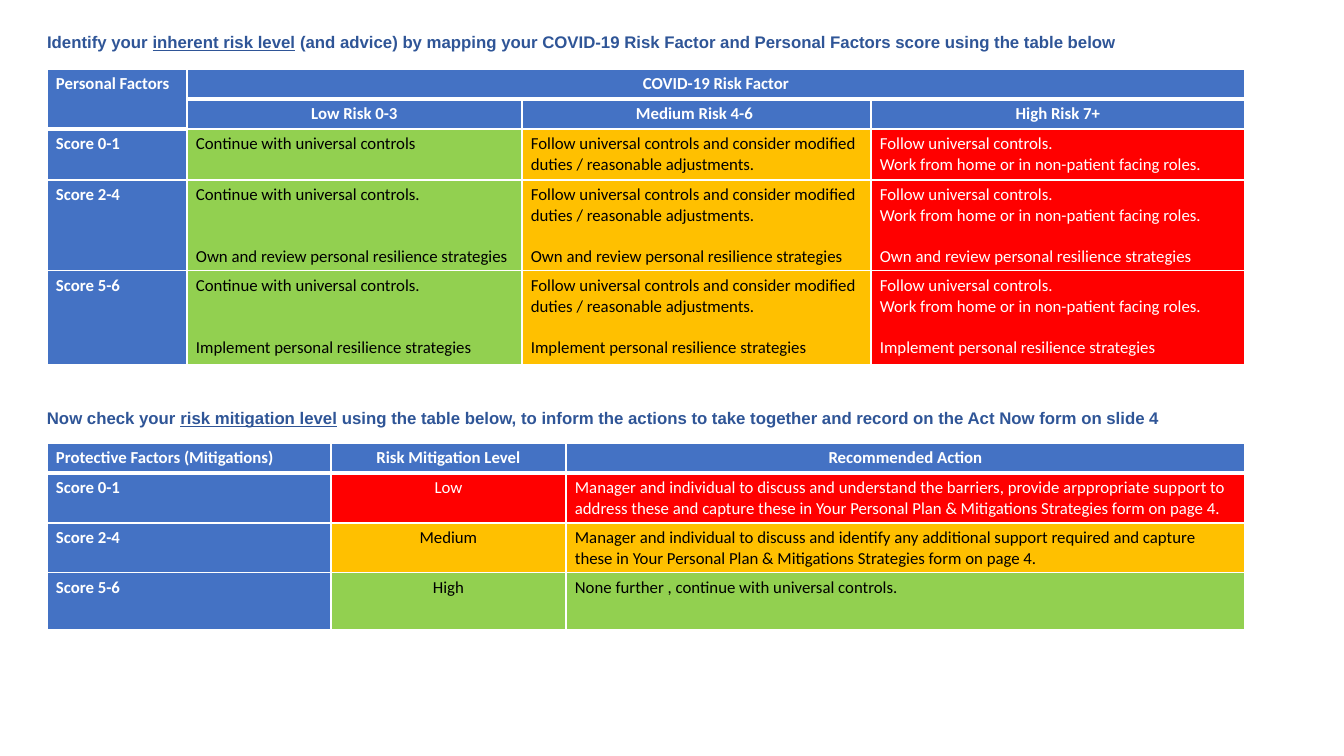
import pptx
import pptx.dml.color
import pptx.enum.text
import pptx.oxml
import pptx.oxml.ns
import pptx.util

PX = 914400 / 100.8
LINE_HEIGHT = 14.65
COLORS = {
    "heading": "2F5597", "blue": "4472C4", "green": "92D050",
    "amber": "FFC000", "red": "FF0000", "white": "FFFFFF", "black": "000000",
}
TEXT_COLORS = {"blue": "white", "red": "white", "green": "black", "amber": "black"}

INHERENT_HEADING = [
    ("Identify your ", False),
    ("inherent risk level", True),
    (" (and advice) by mapping your COVID-19 Risk Factor and Personal Factors score using the table below", False),
]
MITIGATION_HEADING = [
    ("Now check your ", False),
    ("risk mitigation level", True),
    (" using the table below, to inform the actions to take together and record on the Act Now form on slide 4", False),
]
RISK_LEVELS = ["Low Risk 0-3", "Medium Risk 4-6 ", "High Risk 7+"]
MODIFIED_DUTIES = "Follow universal controls and consider modified duties / reasonable adjustments."
HOME_WORKING = ["Follow universal controls.", "Work from home or in non-patient facing roles."]
SCORES = [
    ("Score 0-1", "Continue with universal controls", None),
    ("Score 2-4", "Continue with universal controls.", "Own and review personal resilience strategies"),
    ("Score 5-6", "Continue with universal controls.", "Implement personal resilience strategies"),
]
MITIGATION_HEADERS = ["Protective Factors (Mitigations)", "Risk Mitigation Level", "Recommended Action"]
MITIGATIONS = [
    ("Score 0-1", "Low", "red",
     "Manager and individual to discuss and understand the barriers, provide arppropriate support to "
     "address these and capture these in Your Personal Plan & Mitigations Strategies form on page 4."),
    ("Score 2-4", "Medium", "amber",
     "Manager and individual to discuss and identify any additional support required and capture "
     "these in Your Personal Plan & Mitigations Strategies form on page 4."),
    ("Score 5-6", "High", "green", "None further , continue with universal controls."),
]


def px(length):
    return pptx.util.Emu(round(length * PX))


def rgb(name):
    return pptx.dml.color.RGBColor.from_string(COLORS[name])


def write(paragraph, text, color="black", font="Calibri", bold=False,
          underline=False, centered=False, blank_lines=0):
    align = pptx.enum.text.PP_ALIGN
    paragraph.alignment = align.CENTER if centered else align.LEFT
    paragraph.space_before = pptx.util.Pt(blank_lines * LINE_HEIGHT)
    run = paragraph.add_run()
    run.text = text
    run.font.name = font
    run.font.size = pptx.util.Pt(12)
    run.font.bold = bold
    run.font.underline = underline
    run.font.color.rgb = rgb(color)


def fill_heading(shape, top, parts):
    shape.left, shape.top, shape.width, shape.height = px(37), px(top), px(1199), px(50)
    frame = shape.text_frame
    frame.word_wrap = True
    frame.auto_size = pptx.enum.text.MSO_AUTO_SIZE.NONE
    frame.vertical_anchor = pptx.enum.text.MSO_ANCHOR.TOP
    for text, underline in parts:
        write(frame.paragraphs[0], text, color="heading", font="Arial", bold=True, underline=underline)


def set_borders(cell, top, bottom):
    properties = cell._tc.get_or_add_tcPr()
    for side, points in (("L", 1), ("R", 1), ("T", top), ("B", bottom)):
        properties.append(pptx.oxml.parse_xml(
            f'<a:ln{side} {pptx.oxml.ns.nsdecls("a")} w="{points * 12700}"><a:solidFill>'
            f'<a:srgbClr val="{COLORS["white"]}"/></a:solidFill></a:ln{side}>'))


def entry(color, *paragraphs, bold=False, centered=False):
    return color, [item if isinstance(item, tuple) else (item, 0) for item in paragraphs], bold, centered


def header(text, centered=True):
    return entry("blue", text, bold=True, centered=centered)


def add_grid(slide, top, widths, heights, rows, header_depths):
    table = slide.shapes.add_table(
        len(rows), len(widths), px(47), px(top), px(sum(widths)), px(sum(heights))).table
    for column, width in zip(table.columns, widths):
        column.width = px(width)
    for row, height in zip(table.rows, heights):
        row.height = px(height)
    for row_index, row in enumerate(rows):
        for column_index, (color, paragraphs, bold, centered) in enumerate(row):
            cell = table.cell(row_index, column_index)
            depth = header_depths[column_index]
            set_borders(cell, 3 if row_index == depth else 1,
                        3 if row_index in (0, depth - 1) else 1)
            cell.fill.solid()
            cell.fill.fore_color.rgb = rgb(color)
            cell.margin_left = cell.margin_right = px(9)
            cell.margin_top, cell.margin_bottom = px(5), px(4)
            for index, (text, blank_lines) in enumerate(paragraphs):
                frame = cell.text_frame
                paragraph = frame.add_paragraph() if index else frame.paragraphs[0]
                write(paragraph, text, color=TEXT_COLORS[color], bold=bold,
                      centered=centered, blank_lines=blank_lines)
    return table


def inherent_rows():
    rows = [
        [header("Personal Factors", centered=False), header("COVID-19 Risk Factor"),
         entry("blue"), entry("blue")],
        [entry("blue")] + [header(level) for level in RISK_LEVELS],
    ]
    for score, low_advice, strategy in SCORES:
        after_one = [(strategy, 1)] if strategy else []
        after_two = [(strategy, 2)] if strategy else []
        rows.append([
            header(score, centered=False),
            entry("green", low_advice, *after_two),
            entry("amber", MODIFIED_DUTIES, *after_one),
            entry("red", *HOME_WORKING, *after_one),
        ])
    return rows


def mitigation_rows():
    rows = [[header(text, centered=index > 0) for index, text in enumerate(MITIGATION_HEADERS)]]
    for score, level, color, action in MITIGATIONS:
        rows.append([header(score, centered=False), entry(color, level, centered=True), entry(color, action)])
    return rows


def main():
    presentation = pptx.Presentation()
    presentation.slide_width, presentation.slide_height = px(1344), px(756)
    slide = presentation.slides.add_slide(presentation.slide_layouts.get_by_name("Title Only"))

    fill_heading(slide.shapes.title, 27, INHERENT_HEADING)
    inherent = add_grid(slide, 69, [140, 335, 349, 374], [30, 30, 51, 90, 94],
                        inherent_rows(), [2, 1, 1, 1])
    inherent.cell(0, 0).merge(inherent.cell(1, 0))
    inherent.cell(0, 1).merge(inherent.cell(0, 3))

    fill_heading(slide.shapes.add_textbox(0, 0, 0, 0), 403, MITIGATION_HEADING)
    add_grid(slide, 443, [284, 235, 679], [30, 50, 50, 57], mitigation_rows(), [1, 1, 1])

    presentation.save("out.pptx")


if __name__ == "__main__":
    main()
